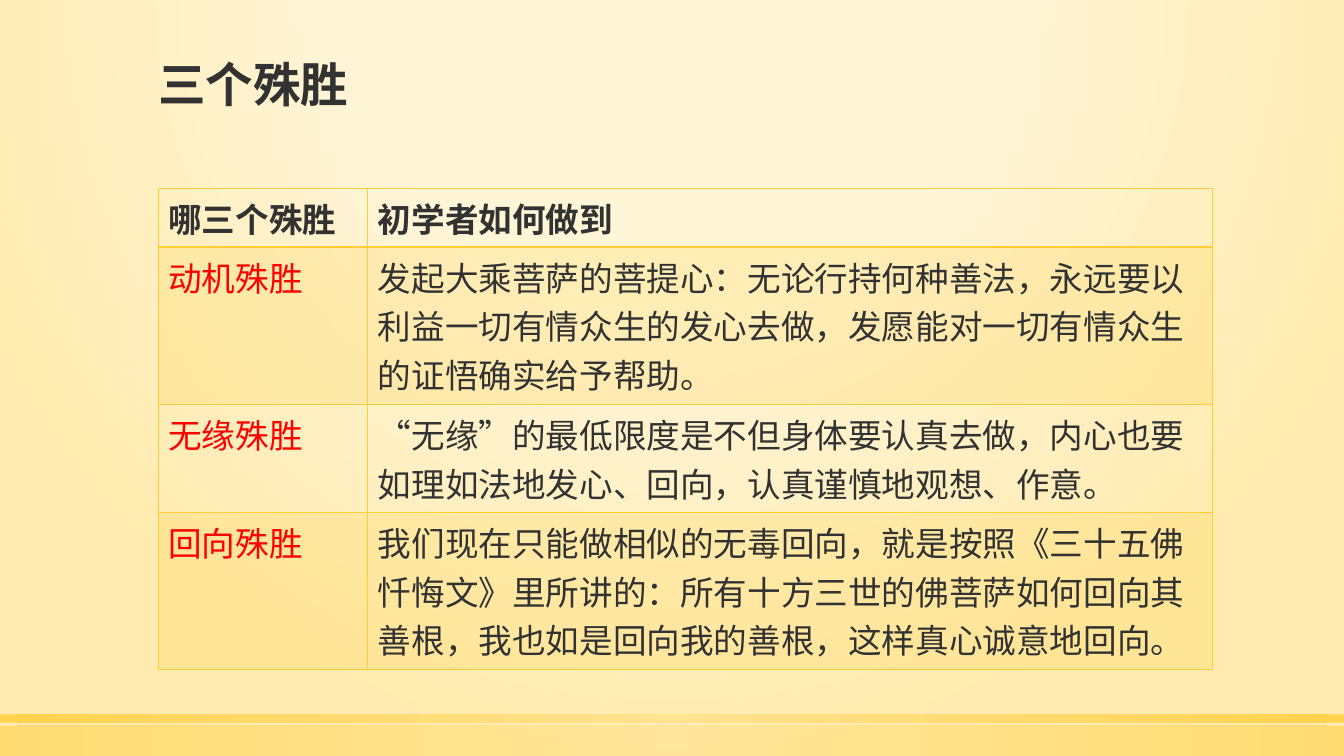
from pptx import Presentation
from pptx.dml.color import RGBColor
from pptx.enum.lang import MSO_LANGUAGE_ID
from pptx.enum.shapes import MSO_SHAPE
from pptx.enum.text import MSO_ANCHOR, PP_ALIGN
from pptx.oxml.ns import qn
from pptx.util import Cm, Pt
from lxml import etree

RECT = MSO_SHAPE.RECTANGLE
BOTTOM, TOP = MSO_ANCHOR.BOTTOM, MSO_ANCHOR.TOP
LEFT = PP_ALIGN.LEFT
CHINESE = MSO_LANGUAGE_ID.SIMPLIFIED_CHINESE
FONT = "Noto Sans CJK SC"
HUES = {"text": "323232", "key": "FF0000", "gold": "FFCD36",
        "light": "FFE186", "cream": "FFF5D7", "sand": "FFEBAF"}
WIDE, HIGH = 33.87, 19.05

ROWS = [
    ("哪三个殊胜", "初学者如何做到"),
    ("动机殊胜", "发起大乘菩萨的菩提心：无论行持何种善法，永远要以利益一切有情众生的发心去做，"
     "发愿能对一切有情众生的证悟确实给予帮助。"),
    ("无缘殊胜", "“无缘”的最低限度是不但身体要认真去做，内心也要如理如法地发心、回向，"
     "认真谨慎地观想、作意。"),
    ("回向殊胜", "我们现在只能做相似的无毒回向，就是按照《三十五佛忏悔文》里所讲的："
     "所有十方三世的佛菩萨如何回向其善根，我也如是回向我的善根，这样真心诚意地回向。"),
]
COLS = (5.28, 21.29)
TALLS = (1.49, 3.96, 2.72, 3.96)


def sub(node, tag, **attrs):
    return etree.SubElement(node, qn(tag), {k: str(v) for k, v in attrs.items()})


def tint(node, hue, alpha=100):
    clr = sub(node, "a:srgbClr", val=HUES[hue])
    if alpha < 100:
        sub(clr, "a:alpha", val=alpha * 1000)


def radial(fill, root, stops, box, alpha=100):
    """Turn a fill into a circular gradient that starts from the box."""
    fill.gradient()
    grad = next(root.iter(qn("a:gradFill")))
    for child in list(grad):
        grad.remove(child)
    stop_list = sub(grad, "a:gsLst")
    for place, hue in stops:
        tint(sub(stop_list, "a:gs", pos=place * 1000), hue, alpha)
    ring = sub(grad, "a:path", path="circle")
    sub(ring, "a:fillToRect", **{k: v * 1000 for k, v in zip("ltrb", box)})


def write(frame, text, size, hue, bold):
    par = frame.paragraphs[0]
    par.alignment = LEFT
    run = par.add_run()
    run.text = text
    font = run.font
    font.size, font.bold, font.name = Pt(size), bold, FONT
    font.language_id = CHINESE
    font.color.rgb = RGBColor.from_string(HUES[hue])
    sub(run._r.get_or_add_rPr(), "a:ea", typeface=FONT)
    return par


def edge(cell, foot):
    """Draw the four cell borders, with the given width at the foot."""
    props = cell._tc.get_or_add_tcPr()
    for spot, side in enumerate("LRTB"):
        width = foot if side == "B" else 1
        line = etree.Element(qn(f"a:ln{side}"), w=str(Pt(width)))
        tint(sub(line, "a:solidFill"), "gold")
        props.insert(spot, line)


# Background and foot bands
def add_base(slide):
    radial(slide.background.fill, slide.element,
           [(0, "cream"), (40, "cream"), (100, "sand")], (50, -80, 50, 180))
    for top, tall, alpha in ((18.29, 0.76, 50), (18, 0.21, 80)):
        band = slide.shapes.add_shape(RECT, 0, Cm(top), Cm(WIDE), Cm(tall))
        band.shadow.inherit = False
        band.line.fill.background()
        radial(band.fill, band.element, [(0, "light"), (100, "gold")],
               (50, 50, 50, 50), alpha)


# Title
def add_title(slide, left, top, width, height):
    title = slide.shapes.title
    title.left, title.top = Cm(left), Cm(top)
    title.width, title.height = Cm(width), Cm(height)
    frame = title.text_frame
    frame.word_wrap, frame.vertical_anchor = True, BOTTOM
    write(frame, "三个殊胜", 34, "text", True).line_spacing = 0.9


# Table
def add_grid(slide, left, top):
    frame = slide.shapes.add_table(len(ROWS), len(COLS), Cm(left), Cm(top),
                                   Cm(sum(COLS)), Cm(sum(TALLS)))
    table = frame.table
    table.horz_banding = False
    for col, width in zip(table.columns, COLS):
        col.width = Cm(width)
    for r, texts in enumerate(ROWS):
        table.rows[r].height = Cm(TALLS[r])
        for c, text in enumerate(texts):
            cell = table.cell(r, c)
            cell.vertical_anchor = TOP
            hue = "key" if r and not c else "text"
            write(cell.text_frame, text, 24, hue, r == 0)
            if r % 2:
                cell.fill.solid()
                cell.fill.fore_color.rgb = RGBColor.from_string(HUES["gold"])
                clr = next(cell._tc.tcPr.iter(qn("a:srgbClr")))
                sub(clr, "a:alpha", val=20000)
            else:
                cell.fill.background()
            edge(cell, 1 if r else 2)


def main():
    deck = Presentation()
    deck.slide_width, deck.slide_height = Cm(WIDE), Cm(HIGH)
    slide = deck.slides.add_slide(deck.slide_layouts[5])
    add_base(slide)
    add_title(slide, 3.73, 1.3, 26.42, 1.68)
    add_grid(slide, 3.99, 4.74)
    deck.save("out.pptx")


if __name__ == "__main__":
    main()
